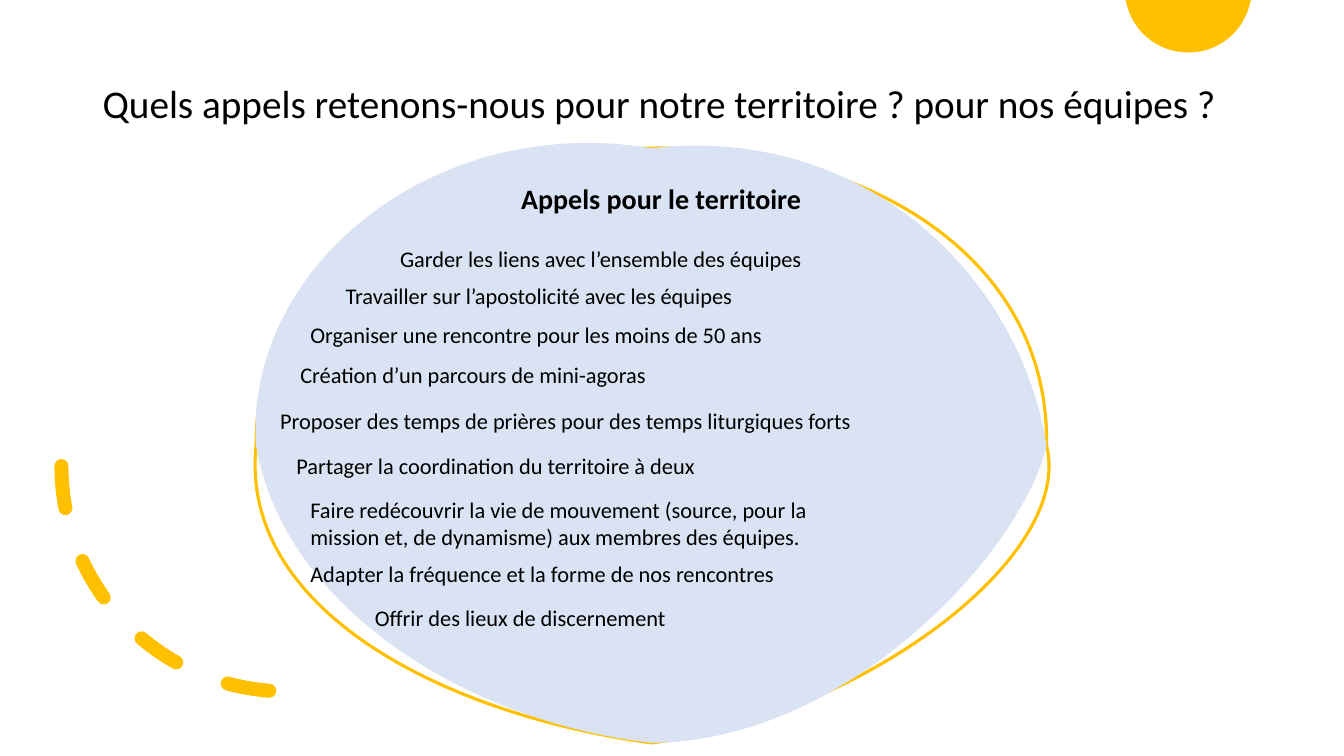
from lxml import etree
from pptx import Presentation
from pptx.dml.color import RGBColor
from pptx.enum.dml import MSO_LINE
from pptx.enum.shapes import MSO_SHAPE
from pptx.enum.text import MSO_ANCHOR, MSO_AUTO_SIZE
from pptx.oxml.ns import qn
from pptx.util import Inches, Pt

ARC = MSO_SHAPE.ARC
DASH = MSO_LINE.DASH
MIDDLE = MSO_ANCHOR.MIDDLE
TOP = MSO_ANCHOR.TOP
GROW = MSO_AUTO_SIZE.SHAPE_TO_FIT_TEXT
FIXED = MSO_AUTO_SIZE.NONE

GOLD = "FFC000"
PALE = "DAE3F3"
BLACK = "000000"

SUN = [(11.16, 0), (12.41, 0), (12.4, 0.02),
       (12.34, 0.31, 12.09, 0.52, 11.79, 0.52),
       (11.48, 0.52, 11.23, 0.31, 11.17, 0.02)]
RING = [(2.54, 4.42), (2.54, 2.55, 4.26, 1.5, 6.46, 1.47),
        (8.48, 1.43, 10.41, 2.48, 10.38, 4.42),
        (10.66, 5.55, 8.49, 7.13, 6.46, 7.37),
        (4.4, 7.09, 2.37, 6.05, 2.54, 4.42)]
BLOB = [(2.54, 4.42), (2.42, 2.69, 4.26, 1.11, 6.46, 1.47),
        (8.61, 1.23, 10.12, 2.77, 10.38, 4.42),
        (10.14, 5.46, 8.42, 7.36, 6.46, 7.37),
        (4.62, 7.16, 2.81, 6.02, 2.54, 4.42)]

CALLS = [
    (3.87, 2.38, 4.39, 0.37, "Garder les liens avec l’ensemble des équipes"),
    (3.33, 2.75, 4.39, 0.37, "Travailler sur l’apostolicité avec les équipes"),
    (2.98, 3.14, 4.88, 0.37, "Organiser une rencontre pour les moins de 50 ans"),
    (3.62, 5.94, 4.39, 0.37, "Offrir des lieux de discernement"),
    (2.88, 3.53, 4.39, 0.37, "Création d’un parcours de mini-agoras"),
    (2.84, 4.44, 4.39, 0.37, "Partager la coordination du territoire à deux"),
    (2.98, 4.87, 5.67, 0.64,
     "Faire redécouvrir la vie de mouvement (source, pour la mission et, "
     "de dynamisme) aux membres des équipes."),
    (2.98, 5.51, 5.36, 0.37, "Adapter la fréquence et la forme de nos rencontres"),
    (2.68, 3.99, 6.27, 0.37,
     "Proposer des temps de prières pour des temps liturgiques forts"),
]


def color(code):
    return RGBColor.from_string(code)


def apply(target, values):
    for name, value in values.items():
        setattr(target, name, value)


def trace(shape, root, nodes, flags):
    route = etree.SubElement(root, qn("a:path"), w=str(shape.width),
                             h=str(shape.height), **flags)
    for index, node in enumerate(nodes):
        kind = "cubicBezTo" if len(node) == 6 else "lnTo" if index else "moveTo"
        step = etree.SubElement(route, qn("a:" + kind))
        for x, y in zip(node[::2], node[1::2]):
            etree.SubElement(step, qn("a:pt"), x=str(Inches(x) - shape.left),
                             y=str(Inches(y) - shape.top))
    etree.SubElement(route, qn("a:close"))


class Deck:
    font = "Calibri"

    def __init__(self, width, height):
        self.show = Presentation()
        apply(self.show, {"slide_width": Inches(width),
                          "slide_height": Inches(height)})
        self.slide = self.show.slides.add_slide(self.show.slide_layouts[6])

    def paint(self, shape, fill=None, line=None, width=1):
        shape.shadow.inherit = False
        if fill:
            shape.fill.solid()
            shape.fill.fore_color.rgb = color(fill)
        else:
            shape.fill.background()
        if line:
            shape.line.color.rgb = color(line)
            shape.line.width = Pt(width)
        else:
            shape.line.fill.background()

    def outline(self, layers, **style):
        ends = [tuple(map(Inches, node[-2:])) for node in layers[0][0]]
        pen = self.slide.shapes.build_freeform(*ends[0])
        pen.add_line_segments(ends[1:])
        shape = pen.convert_to_shape()
        root = shape._element.spPr.find(".//" + qn("a:pathLst"))
        root.remove(root[0])
        for nodes, flags in layers:
            trace(shape, root, nodes, flags)
        self.paint(shape, **style)

    def arc(self, left, top, size):
        shape = self.slide.shapes.add_shape(
            ARC, *map(Inches, (left, top, size, size)))
        self.paint(shape, line=GOLD, width=10)
        shape.rotation = 90
        shape.line.dash_style = DASH
        props = shape._element.spPr
        props.xfrm.set("flipV", "1")
        props.ln.set("cap", "rnd")

    def text(self, left, top, width, height, words, size=16, bold=False,
             anchor=TOP, fit=GROW, lead=None):
        box = self.slide.shapes.add_textbox(
            *map(Inches, (left, top, width, height)))
        frame = box.text_frame
        apply(frame, {"word_wrap": True, "vertical_anchor": anchor,
                      "auto_size": fit})
        line = frame.paragraphs[0]
        line.line_spacing = lead
        run = line.add_run()
        run.text = words
        apply(run.font, {"name": self.font, "size": Pt(size), "bold": bold})
        run.font.color.rgb = color(BLACK)


def main():
    deck = Deck(13.33, 7.5)
    deck.outline([(SUN, {})], fill=GOLD)
    deck.text(0.92, 0.32, 11.5, 1.45,
              "Quels appels retenons-nous pour notre territoire ? "
              "pour nos équipes ?",
              size=28, anchor=MIDDLE, fit=FIXED, lead=0.9)
    deck.arc(0.61, 2.39, 4.47)
    deck.outline([(RING, {"fill": "none"}), (BLOB, {"stroke": "0"})],
                 fill=PALE, line=GOLD, width=2.25)
    deck.text(5.07, 1.75, 3.68, 0.44, "Appels pour le territoire",
              size=20, bold=True)
    for call in CALLS:
        deck.text(*call)
    deck.show.save("out.pptx")


if __name__ == "__main__":
    main()
